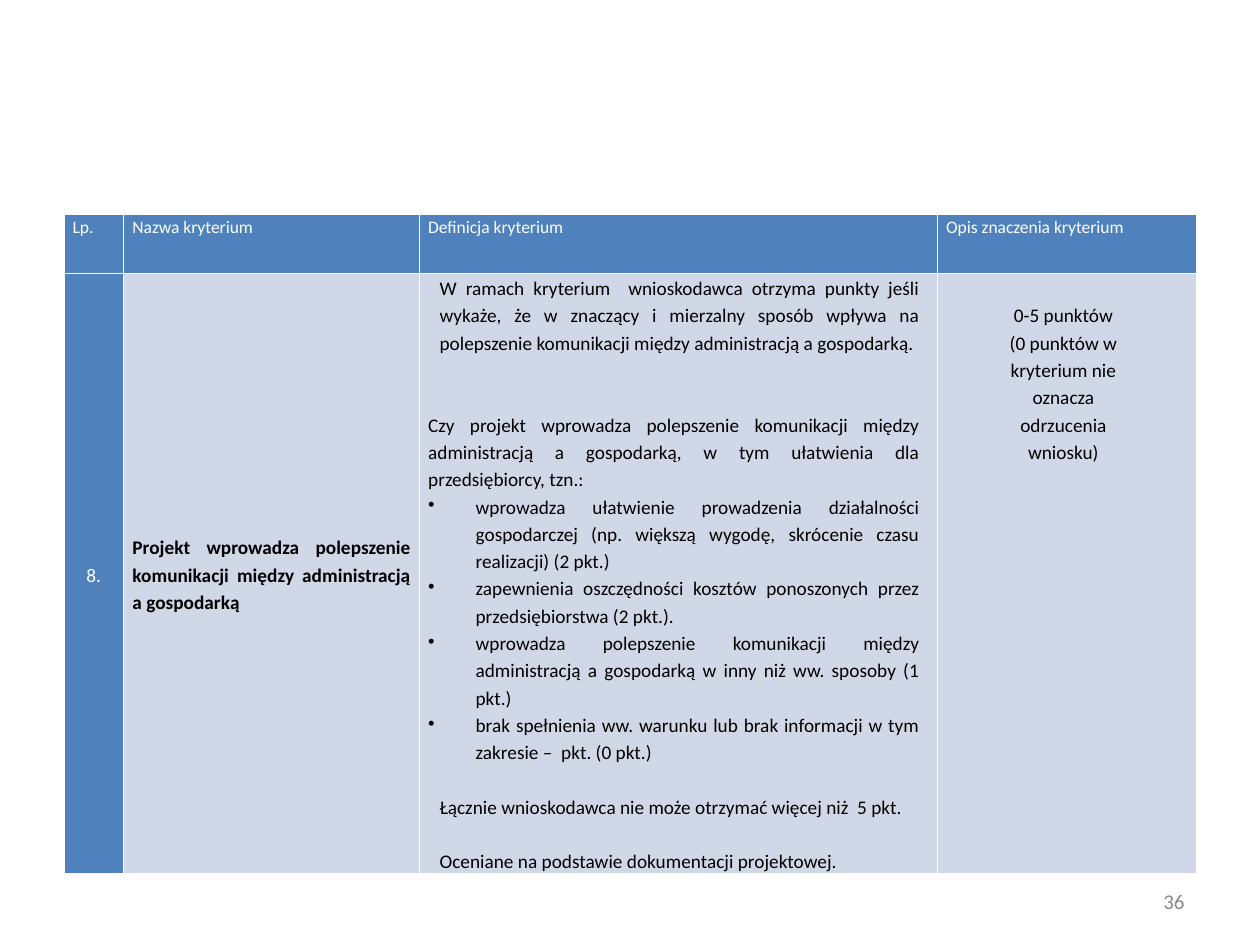
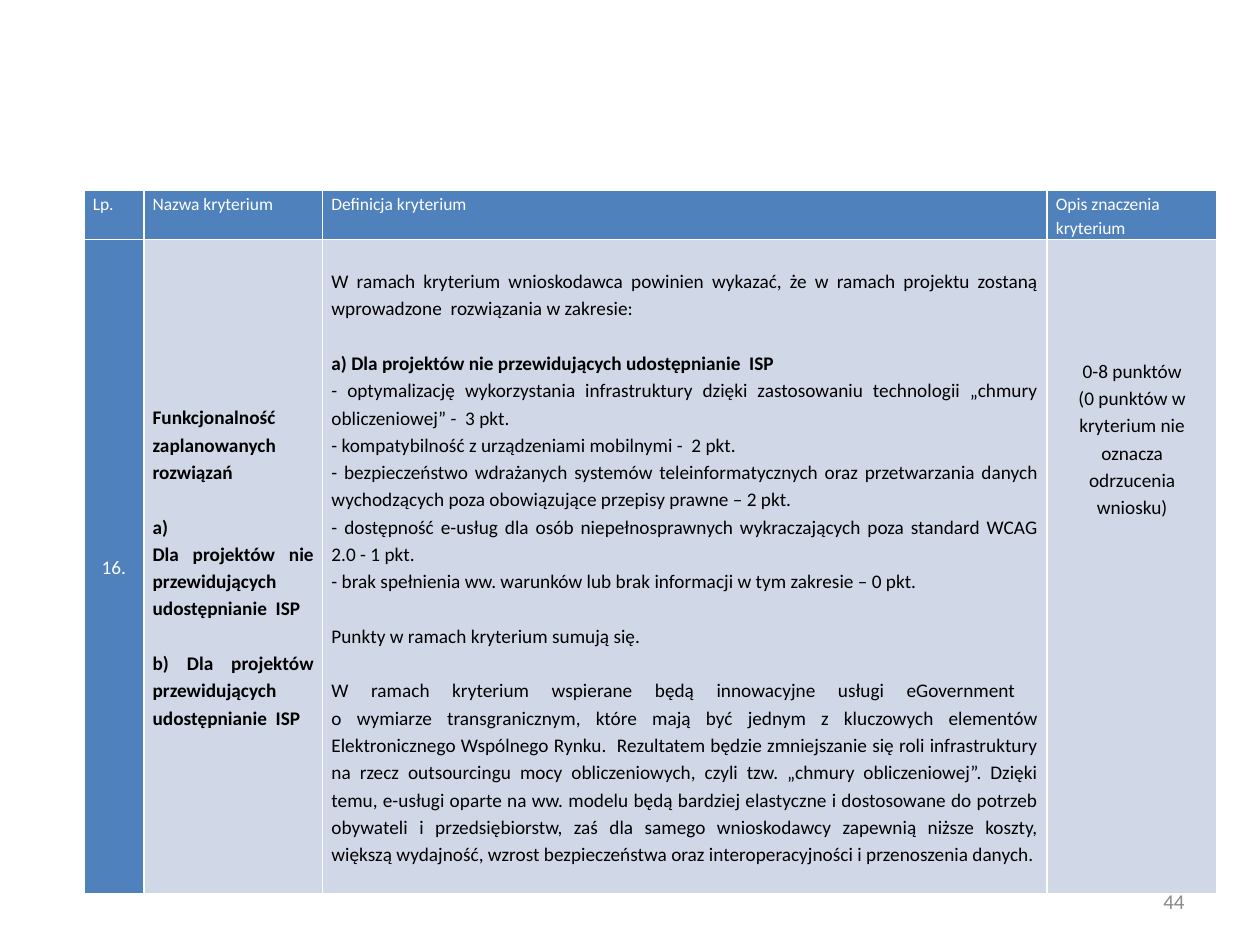
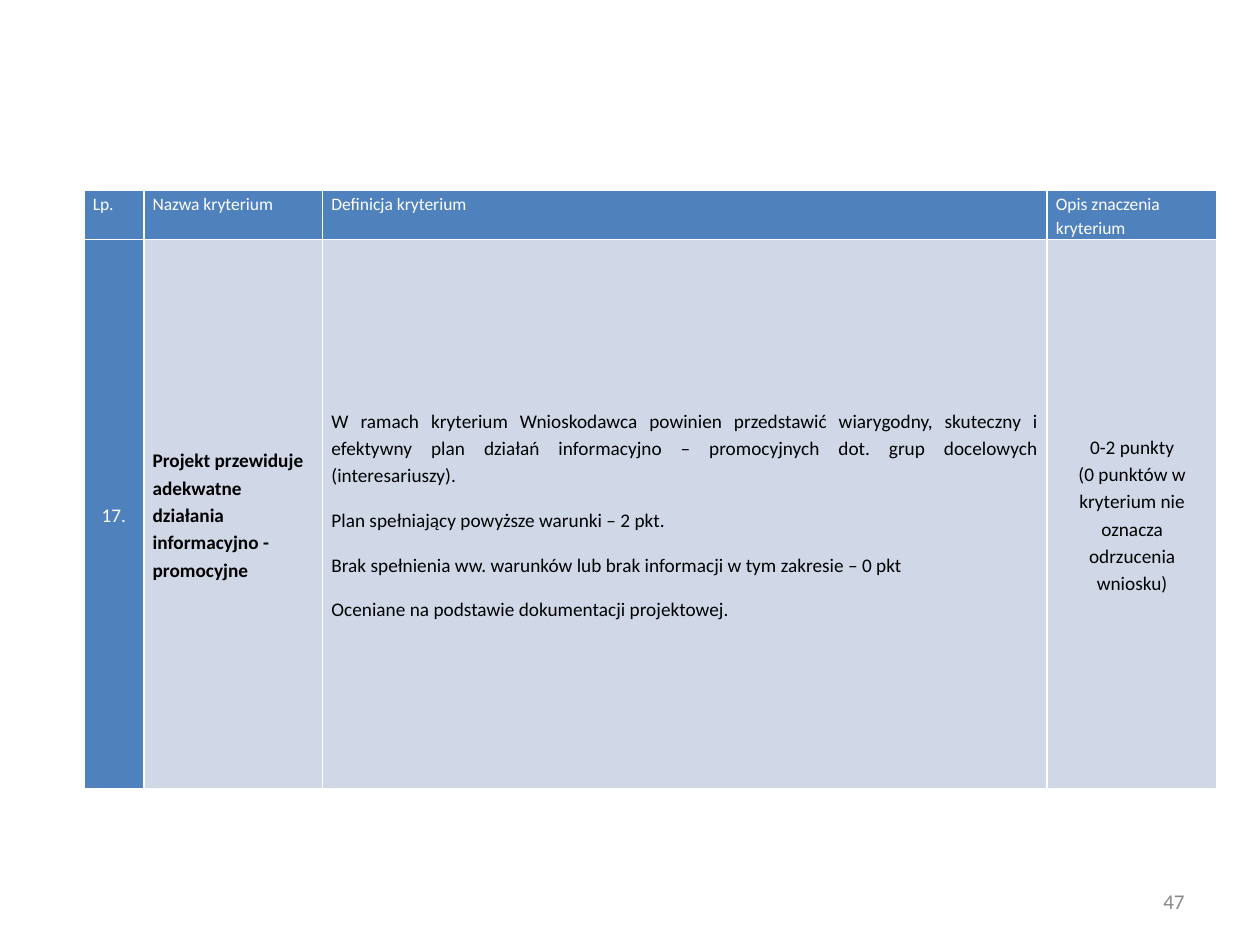
"""Build three slides that each show one project assessment criterion in a table."""
from dataclasses import dataclass

from lxml import etree
from pptx import Presentation
from pptx.dml.color import RGBColor
from pptx.enum import text as t
from pptx.oxml import ns
from pptx.util import Pt


@dataclass(frozen=True)
class Theme:
    """Colours, font and sizes used on every slide."""
    font: str = "Calibri"
    head_fill: str = "4F81BD"
    body_fill: str = "D0D8E8"
    white: str = "FFFFFF"
    black: str = "000000"
    grey: str = "898989"
    head_size: float = 10
    body_size: float = 11
    number_size: float = 12
    inset: float = 5.04
    border: float = 1
    spacing: float = 1.15


THEME = Theme()
LEFT, CENTER, RIGHT, JUSTIFY = (
    t.PP_ALIGN.LEFT, t.PP_ALIGN.CENTER, t.PP_ALIGN.RIGHT, t.PP_ALIGN.JUSTIFY)
TOP, MIDDLE = t.MSO_ANCHOR.TOP, t.MSO_ANCHOR.MIDDLE
LINE = 15.6
BULLET = {"indent": 27.1, "bullet": "•"}
INSET = {"indent": 6.5}
HEADINGS = ["Lp.", "Nazwa kryterium", "Definicja kryterium", "Opis znaczenia kryterium"]
NO_REJECTION = ["(0 punktów w", "kryterium nie", "oznacza", "odrzucenia", "wniosku)"]
NARROW_LAYOUT = {"left": 48, "top": 108.8, "head": 28, "widths": [34.2, 102.2, 414, 97.2]}

CRITERIA = [
    {
        "page": "36", "number": "8.",
        "left": 36.5, "top": 122.4, "head": 34, "body": 343,
        "widths": [34.2, 169, 296, 148],
        "name": {"paragraphs": [
            "Projekt wprowadza polepszenie komunikacji między administracją a gospodarką"]},
        "definition": {"anchor": TOP, "right": 10.2, "paragraphs": [
            ("W ramach kryterium  wnioskodawca otrzyma punkty jeśli wykaże, że w znaczący "
             "i mierzalny sposób wpływa na polepszenie komunikacji między administracją "
             "a gospodarką.", INSET),
            ("Czy projekt wprowadza polepszenie komunikacji między administracją "
             "a gospodarką, w tym ułatwienia dla przedsiębiorcy, tzn.:", {"before": 2 * LINE}),
            ("wprowadza ułatwienie prowadzenia działalności gospodarczej (np. większą "
             "wygodę, skrócenie czasu realizacji) (2 pkt.)", BULLET),
            ("zapewnienia oszczędności kosztów ponoszonych przez przedsiębiorstwa (2 pkt.).",
             BULLET),
            ("wprowadza polepszenie komunikacji między administracją a gospodarką w inny "
             "niż ww. sposoby (1 pkt.)", BULLET),
            ("brak spełnienia ww. warunku lub brak informacji w tym zakresie –  pkt. (0 pkt.)",
             BULLET),
            ("Łącznie wnioskodawca nie może otrzymać więcej niż  5 pkt.",
             {**INSET, "before": LINE}),
            ("Oceniane na podstawie dokumentacji projektowej.", {**INSET, "before": LINE}),
        ]},
        "weight": {"anchor": TOP, "top": LINE, "right": 9,
                   "paragraphs": ["0-5 punktów", *NO_REJECTION]},
    },
    {
        "page": "44", "number": "16.", **NARROW_LAYOUT, "body": 374,
        "name": {"paragraphs": [
            "Funkcjonalność zaplanowanych rozwiązań",
            ("a)", {"before": LINE}),
            "Dla projektów nie przewidujących udostępnianie  ISP",
            ("b) Dla projektów przewidujących udostępnianie  ISP", {"before": LINE}),
        ]},
        "definition": {"anchor": TOP, "top": LINE, "bottom": LINE, "paragraphs": [
            "W ramach kryterium wnioskodawca powinien wykazać, że w ramach projektu zostaną "
            "wprowadzone  rozwiązania w zakresie:",
            ("a) Dla projektów nie przewidujących udostępnianie  ISP",
             {"bold": True, "before": LINE}),
            "- optymalizację wykorzystania infrastruktury dzięki zastosowaniu technologii "
            "„chmury obliczeniowej” -  3 pkt.",
            "- kompatybilność z urządzeniami mobilnymi -  2 pkt.",
            "- bezpieczeństwo wdrażanych systemów teleinformatycznych oraz przetwarzania "
            "danych wychodzących poza obowiązujące przepisy prawne – 2 pkt.",
            "- dostępność e-usług dla osób niepełnosprawnych wykraczających poza standard "
            "WCAG 2.0 - 1 pkt.",
            "- brak spełnienia ww. warunków lub brak informacji w tym zakresie – 0 pkt.",
            ("Punkty w ramach kryterium sumują się.", {"before": LINE}),
            ("W ramach kryterium wspierane będą innowacyjne usługi eGovernment \v"
             "o wymiarze transgranicznym, które mają być jednym z kluczowych elementów "
             "Elektronicznego Wspólnego Rynku.  Rezultatem będzie zmniejszanie się roli "
             "infrastruktury na rzecz outsourcingu mocy obliczeniowych, czyli tzw. „chmury "
             "obliczeniowej”. Dzięki temu, e-usługi oparte na ww. modelu będą bardziej "
             "elastyczne i dostosowane do potrzeb obywateli i przedsiębiorstw, zaś dla "
             "samego wnioskodawcy zapewnią niższe koszty, większą wydajność, wzrost "
             "bezpieczeństwa oraz interoperacyjności i przenoszenia danych.",
             {"before": LINE}),
        ]},
        "weight": {"anchor": TOP, "top": 3 * LINE + 20,
                   "paragraphs": ["0-8 punktów", *NO_REJECTION]},
    },
    {
        "page": "47", "number": "17.", **NARROW_LAYOUT, "body": 314,
        "name": {"paragraphs": [
            ("Projekt przewiduje adekwatne działania informacyjno - promocyjne",
             {"align": LEFT})]},
        "definition": {"paragraphs": [
            "W ramach kryterium Wnioskodawca powinien przedstawić wiarygodny, skuteczny "
            "i efektywny plan działań informacyjno – promocyjnych dot. grup docelowych "
            "(interesariuszy).",
            ("Plan spełniający powyższe warunki – 2 pkt.", {"before": 10}),
            ("Brak spełnienia ww. warunków lub brak informacji w tym zakresie – 0 pkt",
             {"before": 10}),
            ("Oceniane na podstawie dokumentacji projektowej.", {"before": 10}),
        ]},
        "weight": {"paragraphs": ["0-2 punkty", *NO_REJECTION]},
    },
]


def write(paragraph, words, size=THEME.body_size, color=THEME.black, bold=False,
          align=LEFT, before=0, indent=0, bullet=None, spacing=THEME.spacing):
    """Fill one paragraph with formatted words."""
    paragraph.text = words
    paragraph.alignment = align
    paragraph.line_spacing = spacing
    paragraph.space_before = Pt(before)
    props = paragraph._p.get_or_add_pPr()
    props.set("marL", str(Pt(indent)))
    props.set("indent", str(-Pt(indent) if bullet else 0))
    if bullet:
        etree.SubElement(props, ns.qn("a:buChar"), char=bullet)
    for run in paragraph.runs:
        run.font.name = THEME.font
        run.font.size = Pt(size)
        run.font.bold = bold
        run.font.color.rgb = RGBColor.from_string(color)


def add_borders(cell):
    """Draw the thin white lines around a cell."""
    props = cell._tc.get_or_add_tcPr()
    for position, side in enumerate(("a:lnL", "a:lnR", "a:lnT", "a:lnB")):
        line = etree.Element(ns.qn(side), w=str(Pt(THEME.border)))
        fill = etree.SubElement(line, ns.qn("a:solidFill"))
        etree.SubElement(fill, ns.qn("a:srgbClr"), val=THEME.white)
        props.insert(position, line)


def fill_cell(cell, paragraphs, fill, anchor=MIDDLE, top=0, bottom=0,
              right=THEME.inset, **style):
    """Set a cell's fill, margins and paragraphs, each with optional own format."""
    cell.fill.solid()
    cell.fill.fore_color.rgb = RGBColor.from_string(fill)
    cell.vertical_anchor = anchor
    cell.margin_left, cell.margin_right = Pt(THEME.inset), Pt(right)
    cell.margin_top, cell.margin_bottom = Pt(top), Pt(bottom)
    add_borders(cell)
    for index, entry in enumerate(paragraphs):
        words, own = (entry, {}) if isinstance(entry, str) else entry
        frame = cell.text_frame
        paragraph = frame.add_paragraph() if index else frame.paragraphs[0]
        write(paragraph, words, **{**style, **own})


def add_criterion(slide, criterion):
    """Place the table of one criterion."""
    widths, heights = criterion["widths"], [criterion["head"], criterion["body"]]
    table = slide.shapes.add_table(
        len(heights), len(widths), Pt(criterion["left"]), Pt(criterion["top"]),
        Pt(sum(widths)), Pt(sum(heights))).table
    for column, width in zip(table.columns, widths):
        column.width = Pt(width)
    for row, height in zip(table.rows, heights):
        row.height = Pt(height)
    for column, heading in enumerate(HEADINGS):
        fill_cell(table.cell(0, column), [heading], THEME.head_fill, anchor=TOP,
                  size=THEME.head_size, color=THEME.white)
    fill_cell(table.cell(1, 0), [criterion["number"]], THEME.head_fill,
              color=THEME.white, align=CENTER)
    styles = {"name": {"align": JUSTIFY, "bold": True},
              "definition": {"align": JUSTIFY},
              "weight": {"align": CENTER}}
    for column, (part, style) in enumerate(styles.items(), start=1):
        fill_cell(table.cell(1, column), fill=THEME.body_fill, **criterion[part], **style)


def add_page_number(slide, page):
    """Write the page number at the bottom right."""
    frame = slide.shapes.add_textbox(Pt(516), Pt(500.5), Pt(168), Pt(28.75)).text_frame
    frame.word_wrap = True
    frame.vertical_anchor = MIDDLE
    write(frame.paragraphs[0], page, size=THEME.number_size, color=THEME.grey,
          align=RIGHT, spacing=1.0)


def main():
    """Build and save the presentation."""
    deck = Presentation()
    deck.slide_width, deck.slide_height = Pt(720), Pt(540)
    for criterion in CRITERIA:
        slide = deck.slides.add_slide(deck.slide_layouts[6])
        add_page_number(slide, criterion["page"])
        add_criterion(slide, criterion)
    deck.save("out.pptx")


if __name__ == "__main__":
    main()
